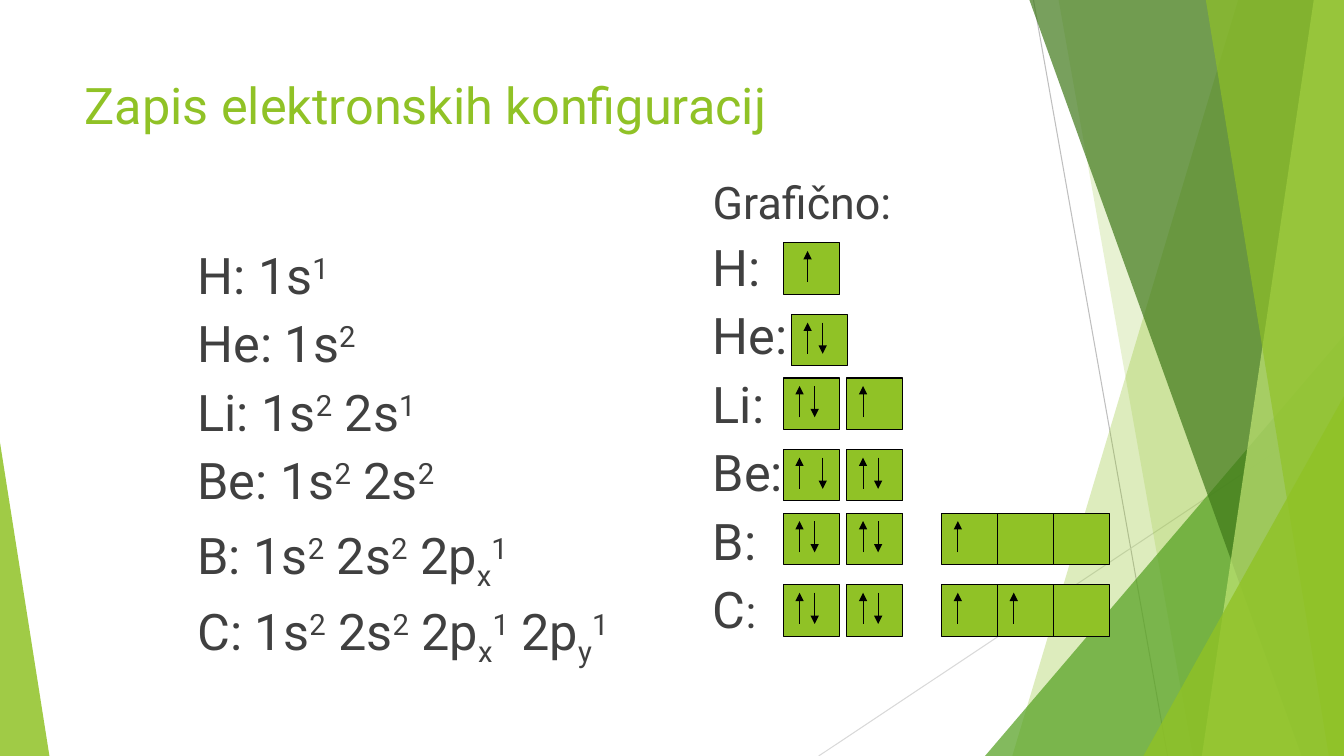
from dataclasses import dataclass

from lxml import etree
from pptx import Presentation
from pptx import util as u
from pptx.dml.color import RGBColor
from pptx.enum import shapes, text
from pptx.oxml import ns


@dataclass(frozen=True)
class Theme:
    font: str = "Roboto"
    green: str = "90C226"
    leaf: str = "54A021"
    forest: str = "3F7819"
    lime: str = "C0E474"
    ink: str = "404040"
    black: str = "000000"
    grey: str = "BFBFBF"
    pale_grey: str = "D9D9D9"
    large: int = 36
    medium: int = 32
    hairline: float = 0.75


THEME = Theme()
WIDTH, HEIGHT = 13.33, 7.5

# Parts separated by |; ^ marks a superscript and _ a subscript
CONFIGURATIONS = [
    "H: 1s|^1",
    "He: 1s|^2",
    "Li: 1s|^2| 2s|^1",
    "Be: 1s|^2| 2s|^2",
    "B: 1s|^2| 2s|^2| 2p|_x|^1",
    "C: 1s|^2| 2s|^2| 2p|_x|^1| 2p|_y|^1",
]
BASELINES = {"^": "30000", "_": "-25000"}

# Orbital cells: size, columns, and arrow offsets from the cell's left edge
CELL_W, CELL_H = 0.555, 0.51
S1, S2, P_START = 0, 0.63, 1.57
PX, PY, PZ = (P_START + CELL_W * i for i in range(3))
UP, DOWN = 0.16, 0.31
ARROW_TOP, ARROW_BOTTOM = 0.08, 0.39
ROW_PAIR, ROW_STEP = 1.34, 0.71

# Each cell: column, offset of the up arrow, offset of the down arrow
ORBITALS = [
    [(S1, 0.24, None)],
    [(0.08, UP, DOWN)],
    [(S1, UP, DOWN), (S2, UP, None)],
    [(S1, UP, 0.39), (S2, UP, DOWN)],
    [(S1, UP, DOWN), (S2, UP, DOWN), (PX, UP, None), (PY, None, None), (PZ, None, None)],
    [(S1, UP, DOWN), (S2, UP, DOWN), (PX, UP, None), (PY, UP, None), (PZ, None, None)],
]


def rgb(code):
    return RGBColor.from_string(code)


def add_line(page, start, end, color, arrow=False):
    line = page.shapes.add_connector(
        shapes.MSO_CONNECTOR.STRAIGHT, *(u.Inches(v) for v in (*start, *end)))
    line.line.color.rgb = rgb(color)
    line.line.width = u.Pt(THEME.hairline)
    if arrow:
        etree.SubElement(line.line._get_or_add_ln(), ns.qn("a:tailEnd"), type="triangle")
    etree.SubElement(line._element.spPr, ns.qn("a:effectLst"))


def paint(shape, color, opacity=100):
    shape.shadow.inherit = False
    shape.fill.solid()
    shape.fill.fore_color.rgb = rgb(color)
    shape.line.fill.background()
    if opacity < 100:
        fill = shape._element.spPr.find(ns.qn("a:solidFill"))
        etree.SubElement(fill[0], ns.qn("a:alpha"), val=str(opacity * 1000))


def add_band(page, top_left, bottom_left, top, bottom, color, opacity):
    """Band reaching from a slanted left edge to the slide's right edge."""
    corners = [(top_left, top), (WIDTH, top), (WIDTH, bottom), (bottom_left, bottom)]
    points = [(u.Inches(x), u.Inches(y)) for x, y in corners]
    builder = page.shapes.build_freeform(*points[0])
    builder.add_line_segments(points[1:], close=True)
    paint(builder.convert_to_shape(), color, opacity)


def add_triangle(page, left, top, width, apex, color, opacity):
    shape = page.shapes.add_shape(
        shapes.MSO_SHAPE.ISOSCELES_TRIANGLE, u.Inches(left), u.Inches(top),
        u.Inches(width), u.Inches(HEIGHT - top))
    shape.adjustments[0] = apex
    paint(shape, color, opacity)


def add_backdrop(page):
    add_line(page, (10.25, 0), (11.58, HEIGHT), THEME.grey)
    add_line(page, (WIDTH, 4.03), (8.12, HEIGHT), THEME.pale_grey)
    add_band(page, 12.28, 10.04, 0, HEIGHT, THEME.green, 30)
    add_band(page, 10.5, 11.83, 0, HEIGHT, THEME.green, 20)
    add_triangle(page, 9.77, 3.33, 3.56, 1, THEME.leaf, 72)
    add_band(page, 10.21, 12.91, 0, HEIGHT, THEME.forest, 70)
    add_band(page, 13.03, 11.92, 0, HEIGHT, THEME.lime, 70)
    add_band(page, 11.96, 13.18, 0, HEIGHT, THEME.green, 65)
    add_triangle(page, 11.34, 3.93, 1.99, 1, THEME.green, 80)
    add_triangle(page, 0, 4.39, 0.49, 0, THEME.green, 85)


def add_text(page, left, top, width, height, lines, color, sizes, spacing=1.0):
    box = page.shapes.add_textbox(*(u.Inches(v) for v in (left, top, width, height)))
    frame = box.text_frame
    frame.word_wrap = True
    frame.vertical_anchor = text.MSO_ANCHOR.TOP
    for index, (line, size) in enumerate(zip(lines, sizes)):
        para = frame.add_paragraph() if index else frame.paragraphs[0]
        para.line_spacing = spacing
        para.space_before = u.Pt(10 if index else 0)
        para.font.name = THEME.font
        para.font.size = u.Pt(size)
        para.font.color.rgb = rgb(color)
        for part in line.split("|"):
            span = para.add_run()
            span.text = part.lstrip("^_")
            if part[0] in BASELINES:
                span._r.get_or_add_rPr().set("baseline", BASELINES[part[0]])
    return frame


def add_cell(page, left, top, up, down):
    cell = page.shapes.add_shape(
        shapes.MSO_SHAPE.FLOWCHART_PROCESS,
        *(u.Inches(v) for v in (left, top, CELL_W, CELL_H)))
    paint(cell, THEME.green)
    cell.line.color.rgb = rgb(THEME.black)
    cell.line.width = u.Pt(THEME.hairline)
    high, low = top + ARROW_TOP, top + ARROW_BOTTOM
    for offset, start, end in ((up, low, high), (down, high, low)):
        if offset is not None:
            x = left + offset
            add_line(page, (x, start), (x, end), THEME.black, arrow=True)


def add_diagram(page, left, top, width, height):
    # Element labels
    labels = ["Grafično:"] + [line.split(":")[0] + ":" for line in CONFIGURATIONS]
    labels[-1] = "C|:"
    sizes = [THEME.medium] + [THEME.large] * len(CONFIGURATIONS)
    frame = add_text(page, left, top, width, height, labels, THEME.ink, sizes, 0.9)
    frame.paragraphs[-1].runs[-1].font.size = u.Pt(THEME.medium)
    # Orbital cells with their electrons
    for row, cells in enumerate(ORBITALS):
        y = top + 0.67 + row // 2 * ROW_PAIR + row % 2 * ROW_STEP
        for column, up, down in cells:
            add_cell(page, left + 0.8 + column, y, up, down)


def main():
    deck = Presentation()
    deck.slide_width, deck.slide_height = u.Inches(WIDTH), u.Inches(HEIGHT)
    page = deck.slides.add_slide(deck.slide_layouts[6])
    add_backdrop(page)
    add_text(page, 0.74, 0.69, 9.4, 1.44, ["Zapis elektronskih konfiguracij"],
             THEME.green, [THEME.large])
    add_text(page, 1.86, 2.44, 4.72, 4.26, CONFIGURATIONS, THEME.ink,
             [THEME.large] * len(CONFIGURATIONS), 0.9)
    add_diagram(page, 6.97, 1.74, 4.25, 5)
    deck.save("out.pptx")


if __name__ == "__main__":
    main()
